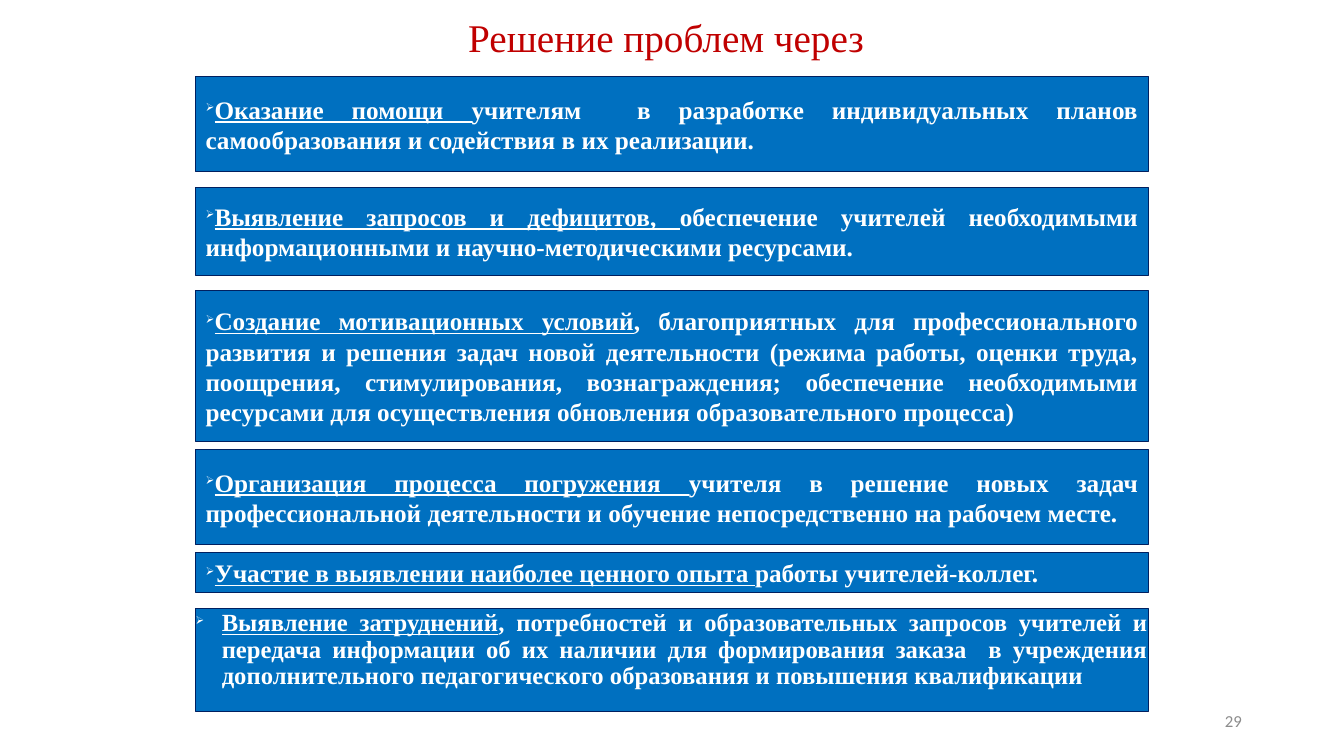
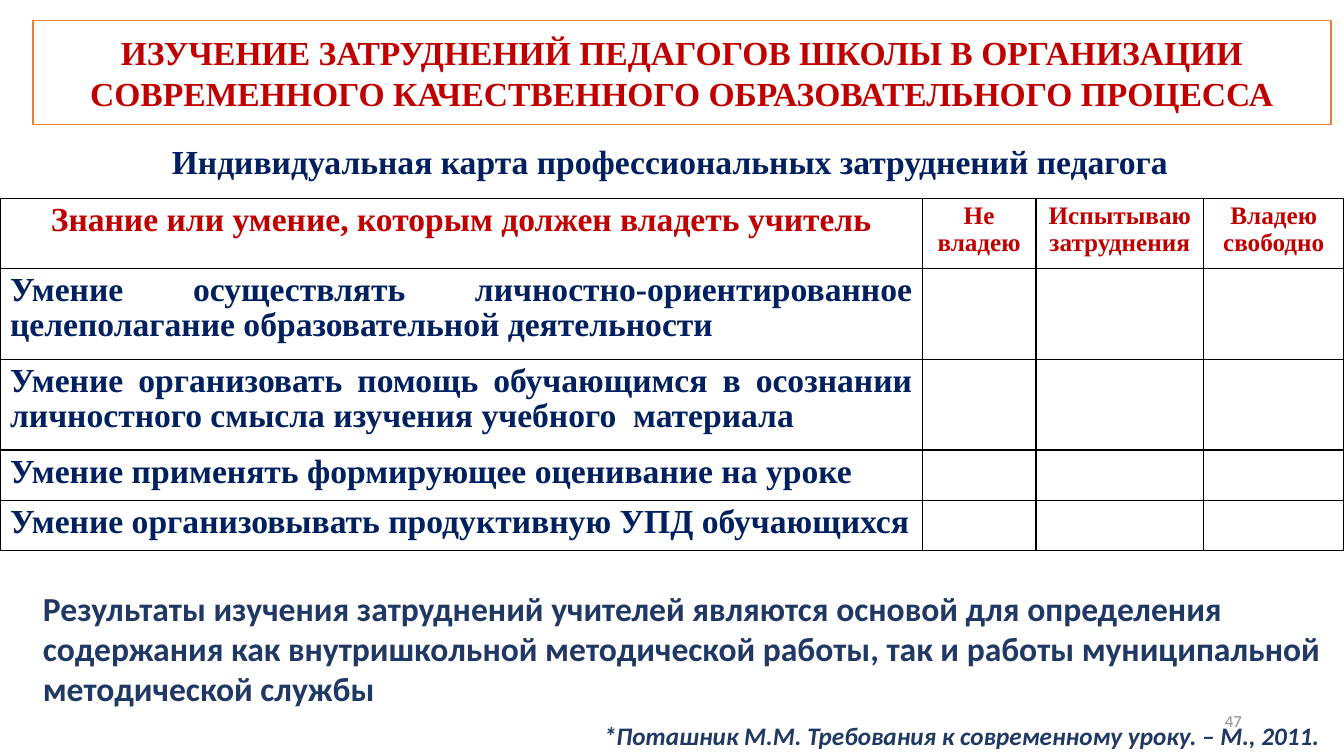
"""Build two slides on teachers' professional difficulties."""
from lxml import etree
from pptx import Presentation
from pptx.dml.color import RGBColor
from pptx.enum.shapes import MSO_SHAPE
from pptx.enum.text import MSO_ANCHOR, PP_ALIGN
from pptx.oxml.ns import qn
from pptx.util import Cm, Pt

RECT = MSO_SHAPE.RECTANGLE
TOP, MIDDLE = MSO_ANCHOR.TOP, MSO_ANCHOR.MIDDLE
LEFT, CENTER, RIGHT, JUSTIFY = PP_ALIGN.LEFT, PP_ALIGN.CENTER, PP_ALIGN.RIGHT, PP_ALIGN.JUSTIFY

SERIF, SANS = "Times New Roman", "Calibri"
RED, NAVY, BLUE, WHITE = "C00000", "002060", "0070C0", "FFFFFF"
INK, ORANGE, GREY, BLACK = "203864", "ED7D31", "8C8C8C", "000000"
SLIDE_SIZE = (33.87, 19.05)
PAGE_NUMBER_AREA = (23.93, 17.65, 7.62, 1.02)

SOLUTIONS_TITLE = "Решение проблем через"
SOLUTIONS_LEFT, SOLUTIONS_TOP, SOLUTIONS_WIDTH = 4.93, 1.93, 24
# Each entry: underlined lead, remaining text, height, gap below.
SOLUTIONS = [
    ("Оказание помощи ",
     "учителям  в разработке индивидуальных планов самообразования и содействия в их реализации.",
     2.4, 0.4),
    ("Выявление запросов и дефицитов, ",
     "обеспечение учителей необходимыми информационными и научно-методическими ресурсами.",
     2.2, 0.4),
    ("Создание мотивационных условий",
     ", благоприятных для профессионального развития и решения задач новой деятельности "
     "(режима работы, оценки труда, поощрения, стимулирования, вознаграждения; обеспечение "
     "необходимыми ресурсами для осуществления обновления образовательного процесса)",
     3.8, 0.2),
    ("Организация процесса погружения ",
     "учителя в решение новых задач профессиональной деятельности и обучение "
     "непосредственно на рабочем месте.",
     2.4, 0.2),
    ("Участие в выявлении наиболее ценного опыта ", "работы учителей-коллег.", 1, 0.4),
    ("Выявление затруднений",
     ", потребностей и образовательных запросов учителей и передача информации об их наличии "
     "для формирования заказа  в учреждения дополнительного педагогического образования "
     "и повышения квалификации",
     2.6, 0),
]

STUDY_TITLE = ("ИЗУЧЕНИЕ ЗАТРУДНЕНИЙ ПЕДАГОГОВ ШКОЛЫ В ОРГАНИЗАЦИИ "
               "СОВРЕМЕННОГО КАЧЕСТВЕННОГО ОБРАЗОВАТЕЛЬНОГО ПРОЦЕССА")
CARD_TITLE = "Индивидуальная карта профессиональных затруднений педагога"
CONCLUSION = ("Результаты изучения затруднений учителей являются основой для определения "
              "содержания как внутришкольной методической работы, так и работы муниципальной "
              "методической службы")
CITATION = "*Поташник М.М. Требования к современному уроку. – М., 2011."
CARD_HEADER = ["Знание или умение, которым должен владеть учитель",
               "Не владею", "Испытываю затруднения", "Владею свободно"]
SKILLS = [
    "Умение осуществлять личностно-ориентированное целеполагание образовательной деятельности",
    "Умение организовать помощь обучающимся в осознании личностного смысла изучения учебного  материала",
    "Умение применять формирующее оценивание на уроке",
    "Умение организовывать продуктивную УПД обучающихся",
]
CARD_TOP = 5
CARD_COLUMNS = [23.24, 2.87, 4.22, 3.54]
CARD_ROWS = [1.76, 2.29, 2.29, 1.27, 1.27]


def rgb(color):
    """Turn a hex string into a colour."""
    return RGBColor.from_string(color)


def style_run(run, size, color, font=SERIF, bold=True, italic=False):
    """Set the font of one run."""
    run.font.name, run.font.size = font, Pt(size)
    run.font.bold, run.font.italic = bold, italic
    run.font.color.rgb = rgb(color)


def write(frame, text, size, color, align=LEFT, anchor=TOP, **font):
    """Fill a text frame with one formatted paragraph."""
    frame.text = text
    frame.word_wrap, frame.vertical_anchor = True, anchor
    paragraph = frame.paragraphs[0]
    paragraph.alignment = align
    for run in paragraph.runs:
        style_run(run, size, color, **font)
    return paragraph


def add_label(slide, area, text, size, color, **style):
    """Add a text box."""
    label = slide.shapes.add_textbox(*map(Cm, area))
    write(label.text_frame, text, size, color, **style)
    return label


def add_panel(slide, area, fill, line, line_width):
    """Add a flat outlined rectangle."""
    panel = slide.shapes.add_shape(RECT, *map(Cm, area))
    panel.shadow.inherit = False
    panel.fill.solid()
    panel.fill.fore_color.rgb = rgb(fill)
    panel.line.color.rgb = rgb(line)
    panel.line.width = Pt(line_width)
    return panel


def add_bullet(paragraph, margin, indent):
    """Give a paragraph a small arrow bullet."""
    properties = paragraph._p.get_or_add_pPr()
    properties.set("marL", str(Cm(margin)))
    properties.set("indent", str(Cm(indent)))
    etree.SubElement(properties, qn("a:buSzPct"), val="45000")
    etree.SubElement(properties, qn("a:buChar"), char="➢")


def add_solution(slide, area, lead, rest, is_last):
    """Add one solution panel with an underlined lead."""
    frame = add_panel(slide, area, BLUE, NAVY, 0.5).text_frame
    size = 17.6 if is_last else 18
    paragraph = write(frame, lead, size, WHITE, align=JUSTIFY, anchor=TOP if is_last else MIDDLE)
    paragraph.runs[0].font.underline = True
    remainder = paragraph.add_run()
    remainder.text = rest
    style_run(remainder, size, WHITE)
    if is_last:
        frame.margin_left = frame.margin_right = frame.margin_bottom = 0
        frame.margin_top = Cm(0.05)
        paragraph.line_spacing = 0.9
        add_bullet(paragraph, 0.66, -0.97)
    else:
        add_bullet(paragraph, 0, -0.94)


def format_cell(cell):
    """Give a cell a black border and a white fill."""
    properties = cell._tc.get_or_add_tcPr()
    for side in ("a:lnL", "a:lnR", "a:lnT", "a:lnB"):
        border = etree.SubElement(properties, qn(side), w=str(Pt(1)))
        fill = etree.SubElement(border, qn("a:solidFill"))
        etree.SubElement(fill, qn("a:srgbClr"), val=BLACK)
    cell.fill.solid()
    cell.fill.fore_color.rgb = rgb(WHITE)


def add_card(slide):
    """Add the table of professional difficulties."""
    area = (0, CARD_TOP, sum(CARD_COLUMNS), sum(CARD_ROWS))
    card = slide.shapes.add_table(len(CARD_ROWS), len(CARD_COLUMNS), *map(Cm, area)).table
    card.first_row = card.horz_banding = False
    for column, width in zip(card.columns, CARD_COLUMNS):
        column.width = Cm(width)
    for row, height in zip(card.rows, CARD_ROWS):
        row.height = Cm(height)
    for cell in card.iter_cells():
        format_cell(cell)
    for index, heading in enumerate(CARD_HEADER):
        paragraph = write(card.cell(0, index).text_frame, heading, 18 if index else 24, RED, align=CENTER)
        paragraph.line_spacing = 0.95
    for index, skill in enumerate(SKILLS, 1):
        paragraph = write(card.cell(index, 0).text_frame, skill, 24, NAVY, align=JUSTIFY)
        paragraph.line_spacing = 0.95


def add_page_number(slide, number):
    """Add the slide number at the bottom right."""
    add_label(slide, PAGE_NUMBER_AREA, number, 12, GREY,
              align=RIGHT, anchor=MIDDLE, font=SANS, bold=False)


def build_solutions(slide):
    """Build the slide listing the solutions."""
    title = add_label(slide, (9.91, 0, 11.86, 1.85), SOLUTIONS_TITLE, 28, RED,
                      align=RIGHT, anchor=MIDDLE, bold=False)
    title.text_frame.margin_left = title.text_frame.margin_right = 0
    top = SOLUTIONS_TOP
    for index, (lead, rest, height, gap) in enumerate(SOLUTIONS, 1):
        area = (SOLUTIONS_LEFT, top, SOLUTIONS_WIDTH, height)
        add_solution(slide, area, lead, rest, index == len(SOLUTIONS))
        top += height + gap
    add_page_number(slide, "29")


def build_study(slide):
    """Build the slide with the card of difficulties."""
    heading = add_panel(slide, (0.83, 0.52, 32.71, 2.62), WHITE, ORANGE, 1)
    write(heading.text_frame, STUDY_TITLE, 24, RED, align=CENTER, anchor=MIDDLE)
    add_label(slide, (14.97, 18.03, 18.7, 1.02), CITATION, 18, INK, font=SANS, italic=True)
    add_label(slide, (0.83, 14.68, 32.75, 3.33), CONCLUSION, 24, INK, font=SANS)
    add_label(slide, (4.08, 3.43, 25.8, 1.27), CARD_TITLE, 24, NAVY)
    add_card(slide)
    add_page_number(slide, "47")


def main():
    """Build and save the presentation."""
    deck = Presentation()
    deck.slide_width, deck.slide_height = map(Cm, SLIDE_SIZE)
    blank = deck.slide_layouts[6]
    for build in (build_solutions, build_study):
        build(deck.slides.add_slide(blank))
    deck.save("out.pptx")


if __name__ == "__main__":
    main()
